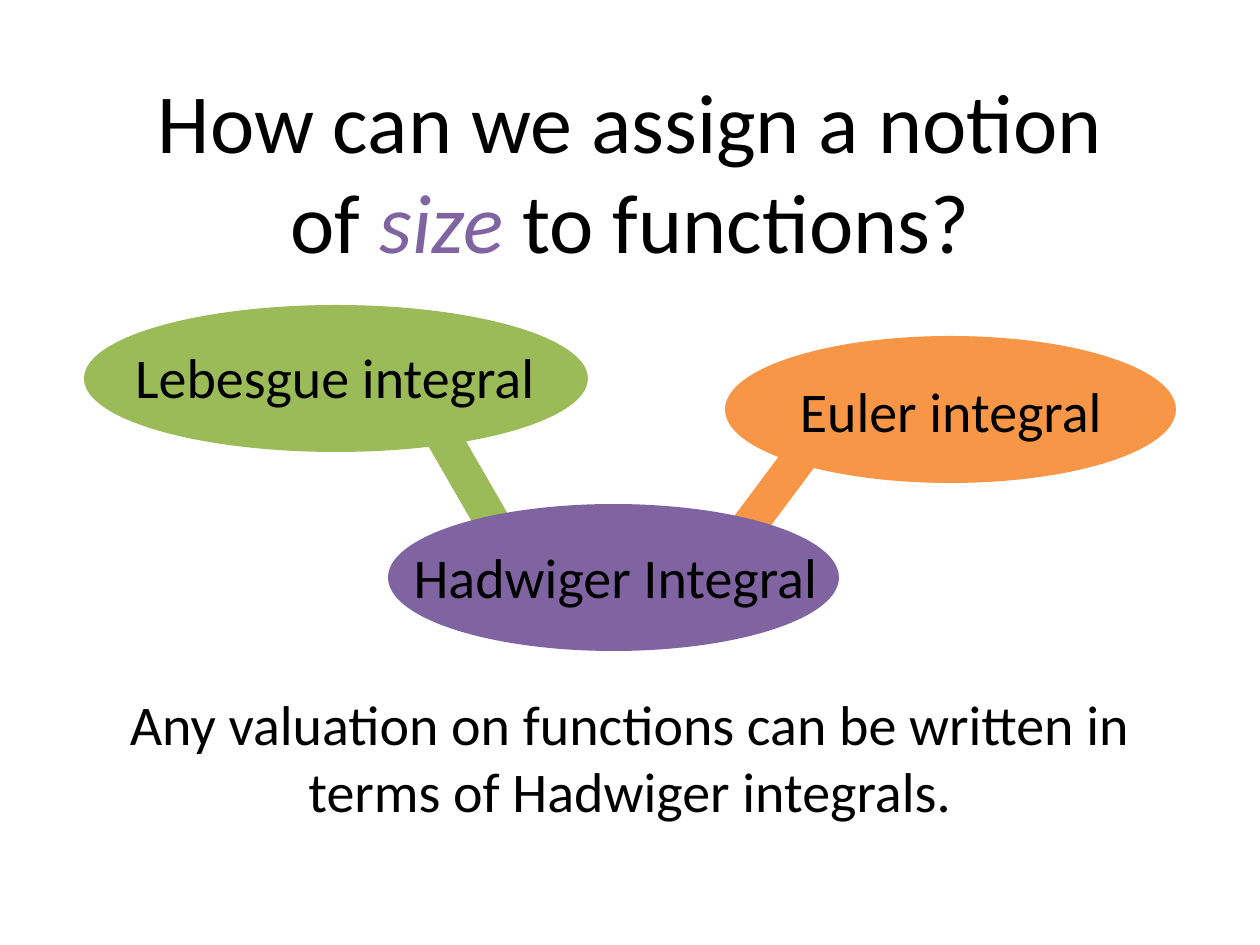
from pptx import Presentation, util as u
from pptx.dml.color import RGBColor
from pptx.enum import shapes, text
from pptx.oxml.ns import qn
from lxml import etree

COLORS = {"black": "000000", "green": "9BBB59", "orange": "F79646", "purple": "8064A2"}
FONT = "Calibri"
PX = u.Inches(1) / 126

QUESTION = [("How can we assign a notion of ", {}),
            ("size ", {"color": "purple", "italic": True}),
            ("to functions?", {})]
CONCLUSION = [("Any valuation on functions can be written in terms of Hadwiger integrals.", {})]

LINKS = [("green", (441, 433), (494, 525)),
         ("orange", (804, 452), (748, 527))]
INTEGRALS = [("Lebesgue integral", "green", (84, 305, 504, 147), (121, 336, 428, 81)),
             ("Euler integral", "orange", (725, 336, 451, 147), (786, 370, 330, 81)),
             ("Hadwiger Integral", "purple", (388, 504, 451, 147), (399, 536, 433, 81))]


def px(*values):
    return [u.Emu(round(value * PX)) for value in values]


def color(name):
    return RGBColor.from_string(COLORS[name])


def add_text(parent, runs, box, size=32, wrap=True, align=text.PP_ALIGN.CENTER):
    frame = parent.add_textbox(*px(*box)).text_frame
    frame.word_wrap = wrap
    frame.auto_size = text.MSO_AUTO_SIZE.SHAPE_TO_FIT_TEXT
    paragraph = frame.paragraphs[0]
    paragraph.alignment = align
    for words, style in runs:
        run = paragraph.add_run()
        run.text = words
        run.font.name = FONT
        run.font.size = u.Pt(size)
        run.font.italic = style.get("italic", False)
        run.font.color.rgb = color(style.get("color", "black"))


def add_link(slide, fill, start, end):
    link = slide.shapes.add_connector(shapes.MSO_CONNECTOR.STRAIGHT, *px(*start, *end))
    link.line.width = u.Pt(20)
    link.line.color.rgb = color(fill)
    etree.SubElement(link._element.spPr, qn("a:effectLst"))


def add_integral(slide, label, fill, oval_box, label_box):
    group = slide.shapes.add_group_shape()
    oval = group.shapes.add_shape(shapes.MSO_SHAPE.OVAL, *px(*oval_box))
    oval.shadow.inherit = False
    oval.fill.solid()
    oval.fill.fore_color.rgb = color(fill)
    oval.line.fill.background()
    add_text(group.shapes, [(label, {})], label_box, wrap=False)


def main():
    presentation = Presentation()
    presentation.slide_width, presentation.slide_height = px(1260, 945)
    slide = presentation.slides.add_slide(presentation.slide_layouts[6])
    for link in LINKS:
        add_link(slide, *link)
    add_text(slide.shapes, QUESTION, (126, 63, 1008, 217), size=48)
    for integral in INTEGRALS:
        add_integral(slide, *integral)
    add_text(slide.shapes, CONCLUSION, (63, 683, 1134, 149))
    presentation.save("out.pptx")


if __name__ == "__main__":
    main()
